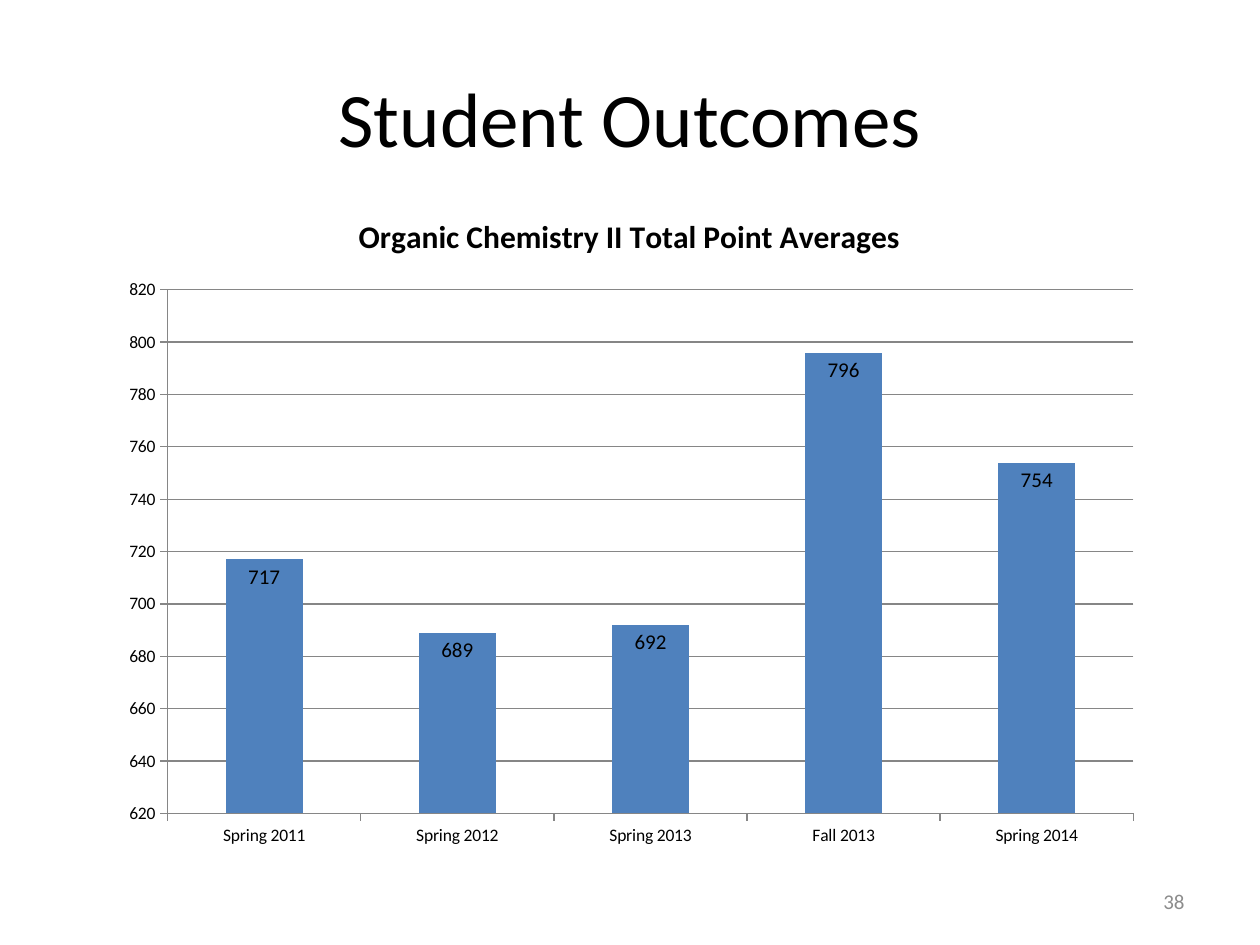
from dataclasses import dataclass

from lxml import etree
from pptx import Presentation
from pptx import util as u
from pptx.chart import data as chart_data
from pptx.dml import color
from pptx.enum import chart as chart_enum
from pptx.enum import text
from pptx.oxml import ns

FONT = "Calibri"
BLACK = "000000"
GREY = "868686"


@dataclass(frozen=True)
class Box:
    left: float
    top: float
    width: float
    height: float

    def lengths(self) -> list[u.Length]:
        return [u.Cm(value) for value in (self.left, self.top, self.width, self.height)]


@dataclass(frozen=True)
class Term:
    name: str
    average: int


TERMS = [
    Term("Spring 2011", 717),
    Term("Spring 2012", 689),
    Term("Spring 2013", 692),
    Term("Fall 2013", 796),
    Term("Spring 2014", 754),
]


def rgb(value: str) -> color.RGBColor:
    return color.RGBColor.from_string(value)


def format_font(font, size: float, fill: str = BLACK, bold: bool = False) -> None:
    font.name = FONT
    font.size = u.Pt(size)
    font.bold = bold
    font.color.rgb = rgb(fill)


def add_text(slide, content: str, box: Box, *, size: float, fill: str = BLACK,
             align=text.PP_ALIGN.CENTER) -> None:
    shape = slide.shapes.add_textbox(*box.lengths())
    frame = shape.text_frame
    frame.word_wrap = True
    frame.vertical_anchor = text.MSO_ANCHOR.MIDDLE
    paragraph = frame.paragraphs[0]
    paragraph.alignment = align
    run = paragraph.add_run()
    run.text = content
    format_font(run.font, size, fill)


def place_plot(chart, **fractions: float) -> None:
    plot_area = chart.element.find(".//" + ns.qn("c:plotArea"))
    for old_layout in plot_area.findall(ns.qn("c:layout")):
        plot_area.remove(old_layout)
    layout = etree.Element(ns.qn("c:layout"))
    manual = etree.SubElement(layout, ns.qn("c:manualLayout"))
    settings = {"layoutTarget": "inner", "xMode": "edge", "yMode": "edge", **fractions}
    for name, value in settings.items():
        etree.SubElement(manual, ns.qn(f"c:{name}")).set("val", str(value))
    plot_area.insert(0, layout)


def format_axis(axis) -> None:
    axis.major_tick_mark = chart_enum.XL_TICK_MARK.OUTSIDE
    axis.minor_tick_mark = chart_enum.XL_TICK_MARK.NONE
    axis.format.line.color.rgb = rgb(GREY)
    axis.format.line.width = u.Pt(0.75)
    format_font(axis.tick_labels.font, 10)


def add_averages_chart(slide, terms: list[Term], box: Box) -> None:
    averages = chart_data.CategoryChartData()
    averages.categories = [term.name for term in terms]
    averages.add_series("Series 1", [term.average for term in terms])
    chart = slide.shapes.add_chart(
        chart_enum.XL_CHART_TYPE.COLUMN_CLUSTERED, *box.lengths(), averages).chart
    format_font(chart.font, 10)
    chart.has_legend = False
    chart.has_title = True
    title = chart.chart_title
    title.include_in_layout = False
    title.text_frame.text = "Organic Chemistry II Total Point Averages"
    format_font(title.text_frame.paragraphs[0].runs[0].font, 18, bold=True)
    place_plot(chart, x=0.06, y=0.15, w=0.92, h=0.78)

    format_axis(chart.category_axis)
    chart.category_axis.has_major_gridlines = False
    value_axis = chart.value_axis
    format_axis(value_axis)
    value_axis.minimum_scale, value_axis.maximum_scale = 620, 820
    value_axis.major_unit = 20
    value_axis.has_major_gridlines = True
    grid_line = value_axis.major_gridlines.format.line
    grid_line.color.rgb = rgb(GREY)
    grid_line.width = u.Pt(0.75)

    plot = chart.plots[0]
    plot.gap_width = 150
    plot.vary_by_categories = False
    series = plot.series[0]
    series.format.fill.solid()
    series.format.fill.fore_color.rgb = rgb("4F81BD")
    labels = series.data_labels
    labels.show_value = True
    labels.position = chart_enum.XL_LABEL_POSITION.INSIDE_END
    format_font(labels.font, 12)


def main() -> None:
    presentation = Presentation()
    presentation.slide_width = u.Cm(25.4)
    presentation.slide_height = u.Cm(19.05)
    slide = presentation.slides.add_slide(presentation.slide_layouts[6])
    add_text(slide, "Student Outcomes", Box(1.27, 0.76, 22.86, 3.18), size=44)
    add_averages_chart(slide, TERMS, Box(2.11, 3.81, 21.16, 13.54))
    add_text(slide, "38", Box(18.2, 17.66, 5.93, 1.01), size=12, fill="8C8C8C",
             align=text.PP_ALIGN.RIGHT)
    presentation.save("out.pptx")


if __name__ == "__main__":
    main()
